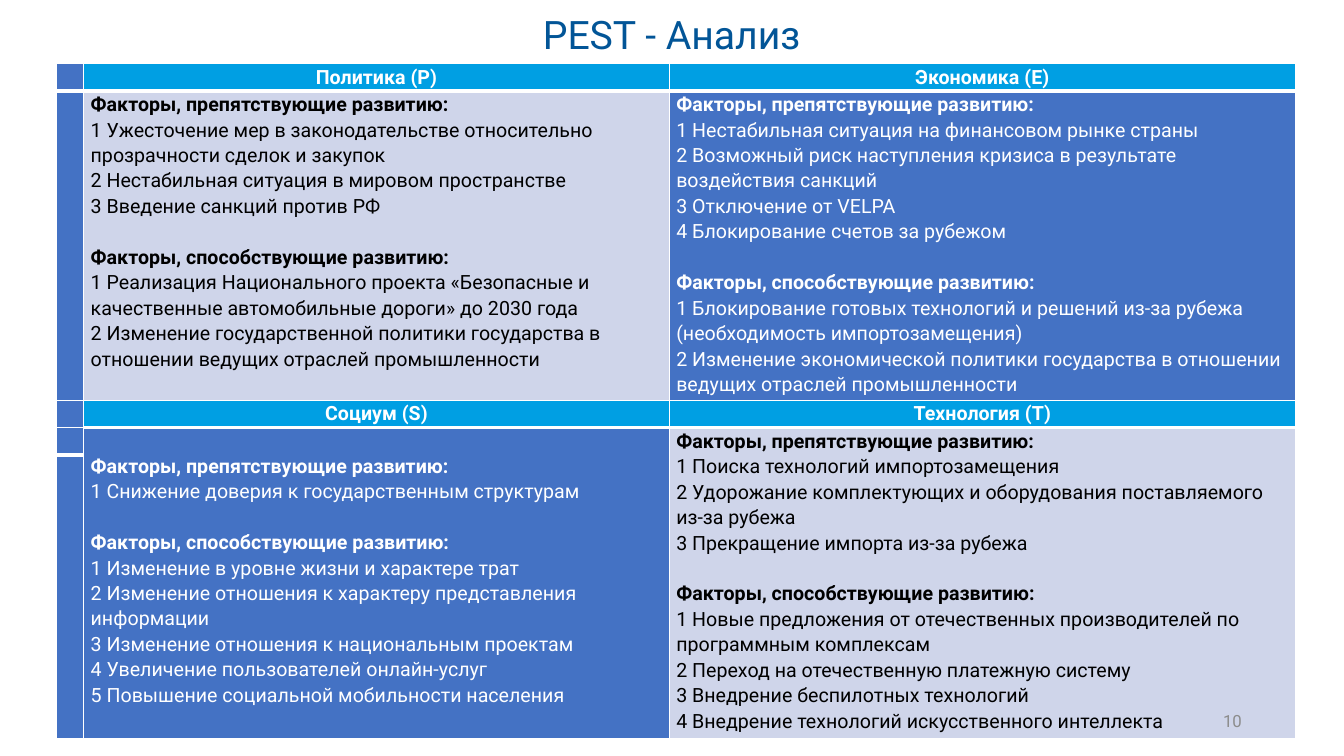
"""Build the PEST analysis slide."""
from lxml.etree import SubElement
from pptx import Presentation
from pptx.dml.color import RGBColor
from pptx.enum.text import MSO_ANCHOR, PP_ALIGN
from pptx.oxml.ns import qn
from pptx.util import Pt

TITLE = "PEST - Анализ"
PAGE = "10"
HINDERING = "Факторы, препятствующие развитию:"
HELPING = "Факторы, способствующие развитию:"
WHITE, BLACK = "FFFFFF", "000000"
BLUE, PALE, CYAN = "4472C4", "CFD5EA", "009FE3"

QUADRANTS = [
    dict(heading="Политика (P)", row=0, column=1, fill=PALE, ink=BLACK, top=0, factors={
        HINDERING: [
            "Ужесточение мер в законодательстве относительно прозрачности сделок и закупок",
            "Нестабильная ситуация в мировом пространстве",
            "Введение санкций против РФ",
        ],
        HELPING: [
            "Реализация Национального проекта «Безопасные и качественные автомобильные дороги» до 2030 года",
            "Изменение государственной политики государства в отношении ведущих отраслей промышленности",
        ]}),
    dict(heading="Экономика (E)", row=0, column=2, fill=BLUE, ink=WHITE, top=0, factors={
        HINDERING: [
            "Нестабильная ситуация на финансовом рынке страны",
            "Возможный риск наступления кризиса в результате воздействия санкций",
            "Отключение от VELPA",
            "Блокирование счетов за рубежом",
        ],
        HELPING: [
            "Блокирование готовых технологий и решений из-за рубежа (необходимость импортозамещения)",
            "Изменение экономической политики государства в отношении ведущих отраслей промышленности",
        ]}),
    dict(heading="Социум (S)", row=2, column=1, fill=BLUE, ink=WHITE, top=18, factors={
        HINDERING: ["Снижение доверия к государственным структурам"],
        HELPING: [
            "Изменение в уровне жизни и характере трат",
            "Изменение отношения к характеру представления информации",
            "Изменение отношения к национальным проектам",
            "Увеличение пользователей онлайн-услуг",
            "Повышение социальной мобильности населения",
        ]}),
    dict(heading="Технология (Т)", row=2, column=2, fill=PALE, ink=BLACK, top=0, factors={
        HINDERING: [
            "Поиска технологий импортозамещения",
            "Удорожание комплектующих и оборудования поставляемого из-за рубежа",
            "Прекращение импорта из-за рубежа",
        ],
        HELPING: [
            "Новые предложения от отечественных производителей по программным комплексам",
            "Переход на отечественную платежную систему",
            "Внедрение беспилотных технологий",
            "Внедрение технологий искусственного интеллекта",
        ]}),
]
COLUMN_WIDTHS = [19.3, 418.3, 447.2]
ROW_HEIGHTS = [19.5, 221, 19.5, 19.5, 202.5]
THICK_EDGES = {(0, 0), (0, 1), (0, 2), (2, 1), (2, 2), (3, 0)}


def color(value):
    return RGBColor.from_string(value)


def style(paragraph, size, ink, bold=False, align=PP_ALIGN.LEFT):
    paragraph.alignment = align
    font = paragraph.font
    font.name, font.size, font.bold = "Roboto", Pt(size), bold
    font.color.rgb = color(ink)


def write(frame, lines, ink, align=PP_ALIGN.LEFT):
    for index, (line, bold, gap) in enumerate(lines):
        paragraph = frame.add_paragraph() if index else frame.paragraphs[0]
        paragraph.text = line
        paragraph.line_spacing = 1.1
        paragraph.space_before = Pt(gap)
        style(paragraph, 14, ink, bold, align)


def add_borders(cell, row, column):
    thick = {"lnT": (row - 1, column) in THICK_EDGES, "lnB": (row, column) in THICK_EDGES}
    for side in ("lnL", "lnR", "lnT", "lnB"):
        line = SubElement(cell._tc.get_or_add_tcPr(), qn(f"a:{side}"),
                          w=str(Pt(3 if thick.get(side) else 1)))
        SubElement(SubElement(line, qn("a:solidFill")), qn("a:srgbClr"), val=WHITE)


def paint(cell, fill):
    cell.fill.solid()
    cell.fill.fore_color.rgb = color(fill)


def add_matrix(slide):
    table = slide.shapes.add_table(
        len(ROW_HEIGHTS), len(COLUMN_WIDTHS), Pt(40.5), Pt(45.5),
        Pt(sum(COLUMN_WIDTHS)), Pt(sum(ROW_HEIGHTS))).table
    for column, width in zip(table.columns, COLUMN_WIDTHS):
        column.width = Pt(width)
    for row, height in zip(table.rows, ROW_HEIGHTS):
        row.height = Pt(height)
    for row in range(len(ROW_HEIGHTS)):
        for column in range(len(COLUMN_WIDTHS)):
            cell = table.cell(row, column)
            cell.margin_left = cell.margin_right = Pt(5)
            cell.margin_top = cell.margin_bottom = 0
            add_borders(cell, row, column)
            paint(cell, BLUE)
            style(cell.text_frame.paragraphs[0], 14, WHITE)

    for quadrant in QUADRANTS:
        row, column = quadrant["row"], quadrant["column"]
        heading, body = table.cell(row, column), table.cell(row + 1, column)
        paint(heading, CYAN)
        write(heading.text_frame, [(quadrant["heading"], True, 0)], WHITE, PP_ALIGN.CENTER)
        if row:
            body.merge(table.cell(row + 2, column))
        paint(body, quadrant["fill"])
        body.margin_top = Pt(quadrant["top"])
        lines = []
        for group, factors in quadrant["factors"].items():
            lines.append((group, True, 18 if lines else 0))
            lines += [(f"{number} {factor}", False, 0) for number, factor in enumerate(factors, 1)]
        write(body.text_frame, lines, quadrant["ink"])


def main():
    deck = Presentation()
    deck.slide_width, deck.slide_height = Pt(960), Pt(540)
    slide = deck.slides.add_slide(deck.slide_layouts[5])

    title = slide.shapes.title
    title.left, title.top, title.width, title.height = Pt(40.5), Pt(3.6), Pt(878.4), Pt(41)
    title.text_frame.text = TITLE
    title.text_frame.vertical_anchor = MSO_ANCHOR.TOP
    style(title.text_frame.paragraphs[0], 28, "025597", align=PP_ALIGN.CENTER)

    add_matrix(slide)

    page = slide.shapes.add_textbox(Pt(678.2), Pt(500.4), Pt(216), Pt(28.8)).text_frame
    page.word_wrap = True
    page.vertical_anchor = MSO_ANCHOR.MIDDLE
    page.text = PAGE
    style(page.paragraphs[0], 12, "8C8C8C", align=PP_ALIGN.RIGHT)

    deck.save("out.pptx")


if __name__ == "__main__":
    main()
